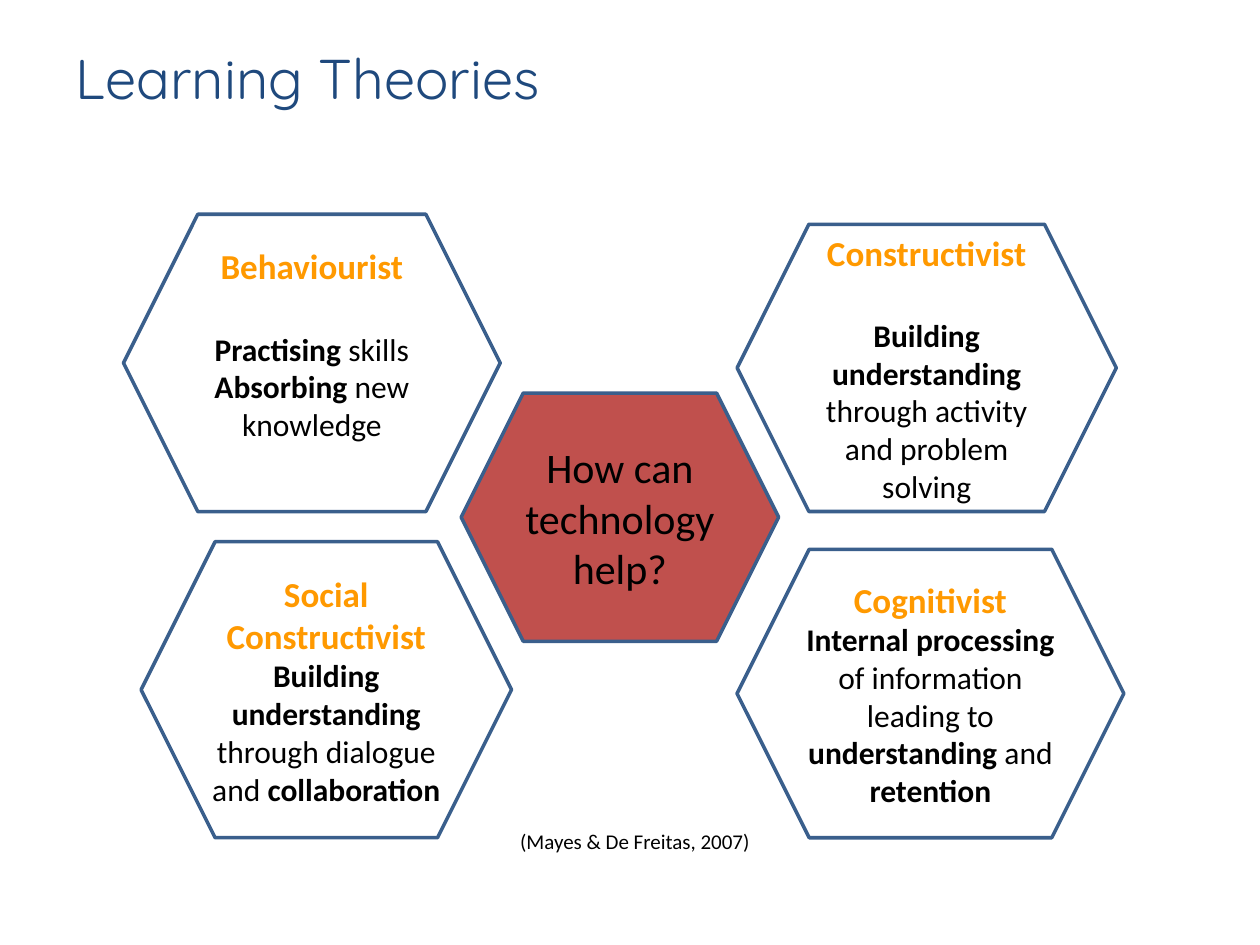
from dataclasses import dataclass

from pptx import Presentation
from pptx.dml.color import RGBColor
from pptx.enum.shapes import MSO_SHAPE
from pptx.enum.text import MSO_ANCHOR, MSO_AUTO_SIZE, PP_ALIGN
from pptx.util import Inches, Pt

HEXAGON = MSO_SHAPE.HEXAGON
MIDDLE = MSO_ANCHOR.MIDDLE
CENTER = PP_ALIGN.CENTER
FIT_SHAPE = MSO_AUTO_SIZE.SHAPE_TO_FIT_TEXT

WHITE = RGBColor(0xFF, 0xFF, 0xFF)
BLACK = RGBColor(0x00, 0x00, 0x00)
NAVY = RGBColor(0x1F, 0x49, 0x7D)
OUTLINE = RGBColor(0x3A, 0x5F, 0x8C)
ORANGE = RGBColor(0xFF, 0x99, 0x00)
RED = RGBColor(0xC0, 0x50, 0x4D)

BODY_FONT = "Calibri"
TITLE_FONT = "Quicksand"
SLIDE_WIDTH = Inches(10)
SLIDE_HEIGHT = Inches(7.5)


@dataclass(frozen=True)
class Box:
    """Position and size in percent of the slide's width and height."""
    left: float
    top: float
    width: float
    height: float

    def lengths(self) -> tuple[int, int, int, int]:
        return (int(SLIDE_WIDTH * self.left / 100), int(SLIDE_HEIGHT * self.top / 100),
                int(SLIDE_WIDTH * self.width / 100), int(SLIDE_HEIGHT * self.height / 100))


@dataclass(frozen=True)
class Span:
    text: str
    size: int = 18
    color: RGBColor = BLACK
    bold: bool = False
    font: str = BODY_FONT


@dataclass(frozen=True)
class Theory:
    name: str
    box: Box
    body: list[list[Span]]
    gap: float = 0      # points below the name
    bottom: float = 0.05    # bottom inset in inches


def strong(text: str) -> Span:
    return Span(text, bold=True)


THEORIES = [
    Theory("Social Constructivist", Box(11.2, 57.33, 29.4, 31.33),
           [[strong("Building understanding "), Span("through dialogue and "),
             strong("collaboration")]]),
    Theory("Behaviourist", Box(9.8, 22.67, 29.9, 31.47),
           [[strong("Practising"), Span(" skills")],
            [strong("Absorbing"), Span(" new knowledge")]],
           gap=24.4, bottom=0.35),
    Theory("Cognitivist", Box(58.5, 58.13, 30.7, 30.53),
           [[strong("Internal processing "), Span("of information leading to "),
             strong("understanding"), Span(" and "), strong("retention")]]),
    Theory("Constructivist", Box(58.5, 23.73, 30.1, 30.4),
           [[strong("Building understanding "),
             Span("through activity and problem solving")]],
           gap=24.4),
]


def write_paragraph(paragraph, spans: list[Span]) -> None:
    for span in spans:
        run = paragraph.add_run()
        run.text = span.text
        run.font.name = span.font
        run.font.size = Pt(span.size)
        run.font.bold = span.bold
        run.font.color.rgb = span.color


def add_label(slide, box: Box, span: Span, wrap: bool = True):
    text_frame = slide.shapes.add_textbox(*box.lengths()).text_frame
    text_frame.word_wrap = wrap
    write_paragraph(text_frame.paragraphs[0], [span])
    return text_frame


def add_hexagon(slide, box: Box, fill: RGBColor, paragraphs: list[list[Span]]):
    shape = slide.shapes.add_shape(HEXAGON, *box.lengths())
    shape.shadow.inherit = False
    shape.fill.solid()
    shape.fill.fore_color.rgb = fill
    shape.line.color.rgb = OUTLINE
    shape.line.width = Pt(2)
    text_frame = shape.text_frame
    text_frame.word_wrap = True
    text_frame.vertical_anchor = MIDDLE
    for index, spans in enumerate(paragraphs):
        paragraph = text_frame.add_paragraph() if index else text_frame.paragraphs[0]
        paragraph.alignment = CENTER
        write_paragraph(paragraph, spans)
    return text_frame


def add_theory(slide, theory: Theory) -> None:
    heading = [Span(theory.name, size=20, color=ORANGE, bold=True)]
    text_frame = add_hexagon(slide, theory.box, WHITE, [heading, *theory.body])
    text_frame.paragraphs[0].space_after = Pt(theory.gap)
    text_frame.margin_bottom = Inches(theory.bottom)


def main() -> None:
    presentation = Presentation()
    presentation.slide_width = SLIDE_WIDTH
    presentation.slide_height = SLIDE_HEIGHT
    slide = presentation.slides.add_slide(presentation.slide_layouts[6])

    add_label(slide, Box(5, 4, 90, 16.67),
              Span("Learning Theories", size=32, color=NAVY, font=TITLE_FONT))
    for theory in THEORIES:
        add_theory(slide, theory)
    add_hexagon(slide, Box(36.6, 41.6, 25.2, 26.27), RED,
                [[Span("How can technology help?", size=24)]])
    citation = add_label(slide, Box(40.3, 87.07, 20.3, 4),
                         Span("(Mayes & De Freitas, 2007)", size=12), wrap=False)
    citation.auto_size = FIT_SHAPE

    presentation.save("out.pptx")


if __name__ == "__main__":
    main()
